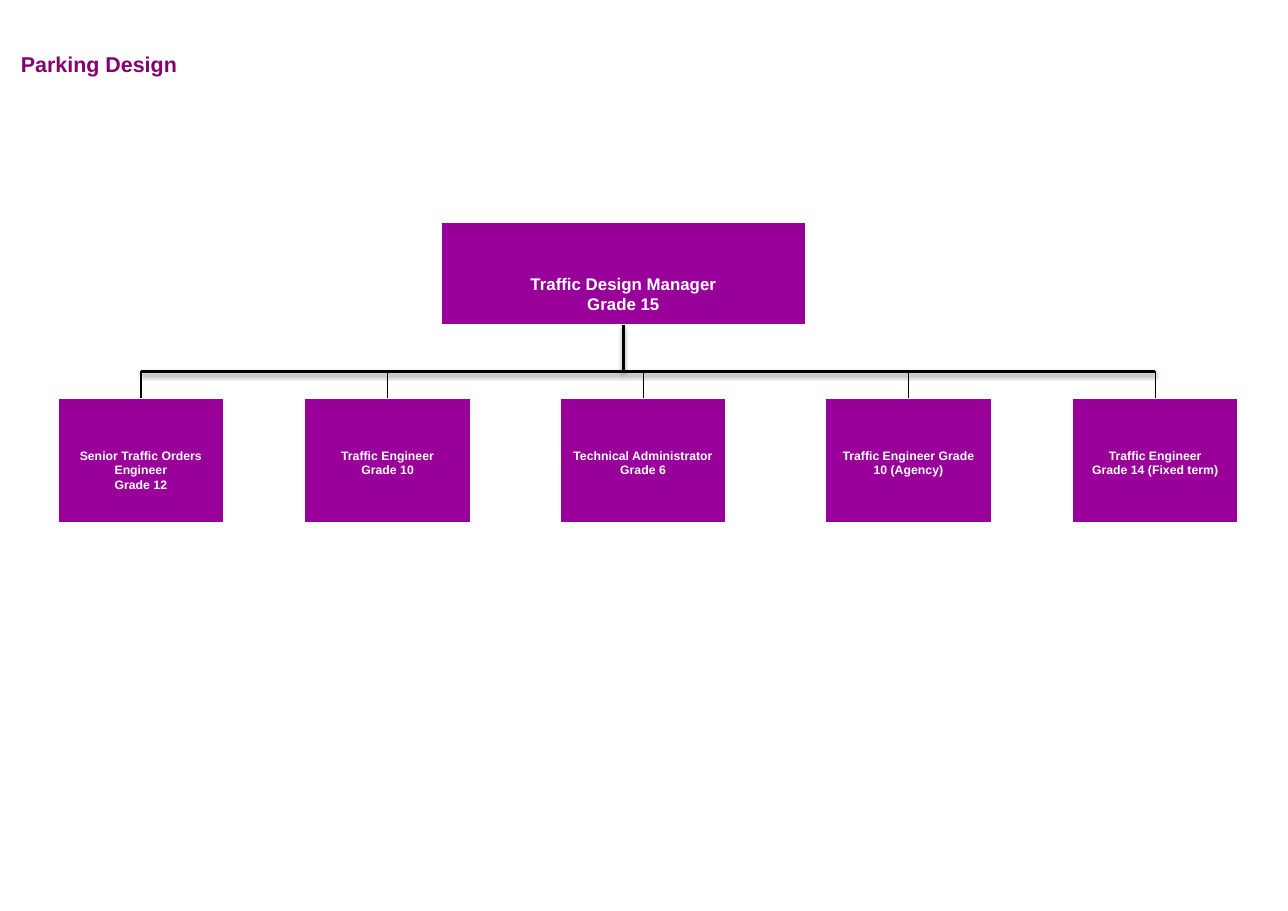
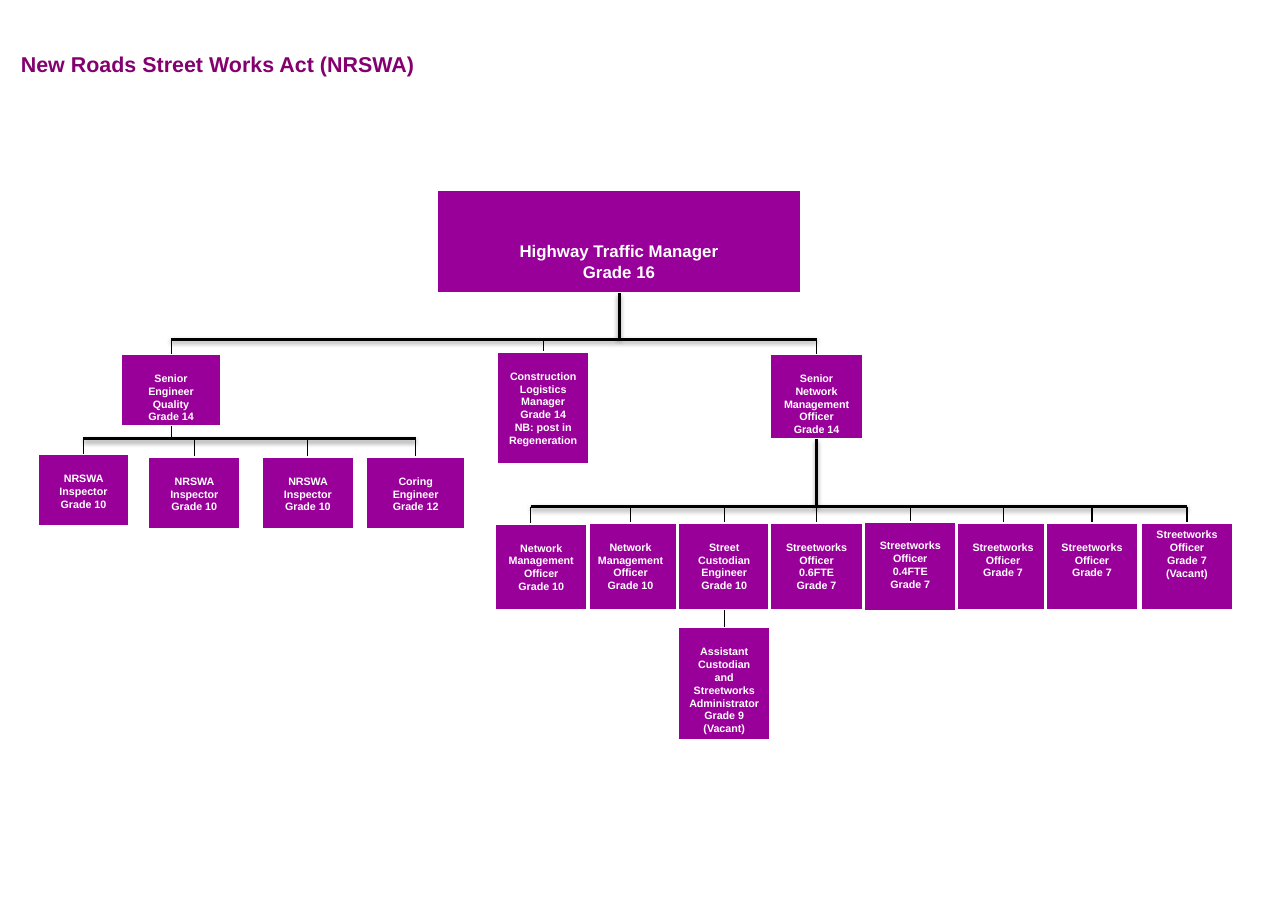
from dataclasses import dataclass

from lxml import etree
from pptx import Presentation
from pptx.dml.color import RGBColor
from pptx.enum.shapes import MSO_CONNECTOR, MSO_SHAPE
from pptx.enum.text import MSO_ANCHOR, MSO_AUTO_SIZE, PP_ALIGN
from pptx.oxml.ns import qn
from pptx.util import Cm, Pt

STRAIGHT = MSO_CONNECTOR.STRAIGHT
RECTANGLE = MSO_SHAPE.RECTANGLE
TOP = MSO_ANCHOR.TOP
MIDDLE = MSO_ANCHOR.MIDDLE
FIXED_SIZE = MSO_AUTO_SIZE.NONE
LEFT = PP_ALIGN.LEFT
CENTER = PP_ALIGN.CENTER
TITLE_ONLY = 5
TOP_SIDE, BOTTOM_SIDE = 0, 2


@dataclass(frozen=True)
class Theme:
    font: str = "Arial"
    title_color: RGBColor = RGBColor(0x84, 0x00, 0x6F)
    post_fill: RGBColor = RGBColor(0x99, 0x00, 0x99)
    white: RGBColor = RGBColor(0xFF, 0xFF, 0xFF)
    black: RGBColor = RGBColor(0x00, 0x00, 0x00)
    title_size: float = 14
    manager_size: float = 11
    post_size: float = 8
    small_post_size: float = 7
    border: float = 2
    rail: float = 2
    drop: float = 0.75


@dataclass(frozen=True)
class Box:
    left: float
    top: float
    width: float
    height: float


@dataclass(frozen=True)
class PostStyle:
    size: float
    head_room: float
    anchor: MSO_ANCHOR = TOP


@dataclass(frozen=True)
class Post:
    lines: tuple
    left: float
    drop: float
    width: float
    height: float
    style: PostStyle
    joint: float | None = None


THEME = Theme()
MANAGER = PostStyle(THEME.manager_size, 1.05, MIDDLE)
WIDE = PostStyle(THEME.post_size, 1.16)
SMALL = PostStyle(THEME.small_post_size, 0.42)
RAISED = PostStyle(THEME.small_post_size, 0.13)

TITLE_BOX = Box(0.25, 0.33, 10.57, 2.31)
INSPECTOR = ("NRSWA Inspector", "Grade 10")
NETWORK_OFFICER = ("Network Management Officer", "Grade 10")
STREETWORKS_OFFICER = ("Streetworks Officer", "Grade 7")


def add_run(paragraph, text, size, color):
    run = paragraph.add_run()
    run.text = text
    run.font.name = THEME.font
    run.font.size = Pt(size)
    run.font.bold = True
    run.font.color.rgb = color


def add_title(slide, box, text):
    title = slide.shapes.title
    title.left, title.top = Cm(box.left), Cm(box.top)
    title.width, title.height = Cm(box.width), Cm(box.height)
    frame = title.text_frame
    frame.auto_size = FIXED_SIZE
    frame.word_wrap = True
    frame.vertical_anchor = MIDDLE
    frame.margin_left = frame.margin_right = Cm(0.23)
    frame.margin_top = frame.margin_bottom = Cm(0.1)
    heading = frame.paragraphs[0]
    heading.alignment = LEFT
    add_run(heading, text, THEME.title_size, THEME.title_color)


def add_post(slide, box, lines, style):
    post = slide.shapes.add_shape(
        RECTANGLE, Cm(box.left), Cm(box.top), Cm(box.width), Cm(box.height)
    )
    post.shadow.inherit = False
    post.fill.solid()
    post.fill.fore_color.rgb = THEME.post_fill
    post.line.color.rgb = THEME.white
    post.line.width = Pt(THEME.border)
    frame = post.text_frame
    frame.word_wrap = True
    frame.vertical_anchor = style.anchor
    frame.margin_left = frame.margin_right = Cm(0.25)
    frame.margin_top = Cm(style.head_room)
    frame.margin_bottom = Cm(0.13) if style.anchor == MIDDLE else 0
    for index, line in enumerate(lines):
        paragraph = frame.paragraphs[0] if index == 0 else frame.add_paragraph()
        paragraph.alignment = CENTER
        add_run(paragraph, line, style.size, THEME.white)
    return post


def add_link(slide, start, end, weight):
    link = slide.shapes.add_connector(STRAIGHT, *start, *end)
    link.line.color.rgb = THEME.black
    link.line.width = Pt(weight)
    effects = etree.SubElement(link._element.spPr, qn("a:effectLst"))
    if weight == THEME.rail:
        shadow = etree.SubElement(
            effects, qn("a:outerShdw"), blurRad=str(Pt(3.1)), dist=str(Pt(1.6)),
            dir="5400000", rotWithShape="0",
        )
        black = etree.SubElement(shadow, qn("a:srgbClr"), val=str(THEME.black))
        etree.SubElement(black, qn("a:alpha"), val="38000")
    return link


def center_x(post):
    return post.left + post.width // 2


def add_team(slide, left, rail_top, manager, posts, stem_weight):
    members = [
        add_post(
            slide,
            Box(left + post.left, rail_top + post.drop, post.width, post.height),
            post.lines,
            post.style,
        )
        for post in posts
    ]
    rail_y = Cm(rail_top)
    joints = []
    for post, member in zip(posts, members):
        joint = center_x(member) if post.joint is None else Cm(left + post.joint)
        joints.append(joint)
        drop = add_link(slide, (joint, rail_y), (joint, member.top), THEME.drop)
        if post.joint is None:
            drop.end_connect(member, TOP_SIDE)
    add_link(slide, (min(joints), rail_y), (max(joints), rail_y), THEME.rail)
    stem_x = center_x(manager)
    stem = add_link(
        slide, (stem_x, manager.top + manager.height), (stem_x, rail_y), stem_weight
    )
    stem.begin_connect(manager, BOTTOM_SIDE)
    return members


def add_assistant(slide, box, manager, lines):
    assistant = add_post(slide, box, lines, SMALL)
    x = center_x(manager)
    link = add_link(
        slide, (x, manager.top + manager.height), (x, assistant.top), THEME.drop
    )
    link.begin_connect(manager, BOTTOM_SIDE)
    link.end_connect(assistant, TOP_SIDE)


def start_slide(deck, title):
    slide = deck.slides.add_slide(deck.slide_layouts[TITLE_ONLY])
    add_title(slide, TITLE_BOX, title)
    return slide


def build_parking_design(deck):
    slide = start_slide(deck, "Parking Design")
    manager = add_post(
        slide, Box(10.16, 5.11, 8.43, 2.39), ("Traffic Design Manager", "Grade 15"), MANAGER
    )
    team = (
        (0, ("Senior Traffic Orders Engineer", "Grade 12")),
        (5.69, ("Traffic Engineer", "Grade 10")),
        (11.58, ("Technical Administrator", "Grade 6")),
        (17.7, ("Traffic Engineer Grade 10 (Agency)",)),
        (23.39, ("Traffic Engineer", "Grade 14 (Fixed term)")),
    )
    posts = [Post(lines, left, 0.61, 3.86, 2.9, WIDE) for left, lines in team]
    add_team(slide, 1.32, 8.56, manager, posts, THEME.rail)


def build_street_works(deck):
    slide = start_slide(deck, "New Roads Street Works Act (NRSWA)")
    manager = add_post(
        slide, Box(10.06, 4.37, 8.43, 2.39), ("Highway Traffic Manager", "Grade 16"), MANAGER
    )
    seniors = (
        Post(("Senior Engineer Quality", "Grade 14"), 0, 0.33, 2.31, 1.68, SMALL),
        Post(
            ("Construction Logistics Manager", "Grade 14", "NB: post in Regeneration"),
            8.67, 0.28, 2.13, 2.62, SMALL,
        ),
        Post(("Senior Network Management Officer", "Grade 14"), 14.96, 0.33, 2.16, 1.98, SMALL),
    )
    quality, _, network = add_team(slide, 2.79, 7.82, manager, seniors, THEME.rail)

    inspectors = (
        Post(INSPECTOR, 0, 0.35, 2.13, 1.68, SMALL),
        Post(INSPECTOR, 2.54, 0.41, 2.16, 1.68, SMALL),
        Post(INSPECTOR, 5.16, 0.41, 2.16, 1.68, SMALL),
        Post(("Coring Engineer", "Grade 12"), 7.57, 0.41, 2.31, 1.68, SMALL),
    )
    add_team(slide, 0.86, 10.11, quality, inspectors, THEME.drop)

    officers = (
        Post(("Street Custodian Engineer", "Grade 10"), 4.22, 0.36, 2.16, 2.03, SMALL),
        Post(("Streetworks Officer", "0.6FTE", "Grade 7"), 6.35, 0.36, 2.16, 2.03, SMALL),
        Post(("Streetworks Officer", "0.4FTE", "Grade 7"), 8.51, 0.33, 2.16, 2.08, SMALL),
        Post(NETWORK_OFFICER, 2.06, 0.36, 2.16, 2.03, SMALL),
        Post(NETWORK_OFFICER, 0, 0.38, 2.16, 2.01, SMALL, joint=0.84),
        Post(STREETWORKS_OFFICER, 10.65, 0.36, 2.16, 2.03, SMALL),
        Post(STREETWORKS_OFFICER, 12.7, 0.36, 2.16, 2.03, SMALL),
        Post((*STREETWORKS_OFFICER, "(Vacant)"), 14.89, 0.36, 2.16, 2.03, RAISED),
    )
    custodian = add_team(slide, 11.4, 11.68, network, officers, THEME.rail)[0]
    add_assistant(
        slide,
        Box(15.62, 14.45, 2.16, 2.62),
        custodian,
        ("Assistant Custodian and Streetworks Administrator", "Grade 9", "(Vacant)"),
    )


def main():
    deck = Presentation()
    deck.slide_width, deck.slide_height = Cm(29.7), Cm(21)
    build_parking_design(deck)
    build_street_works(deck)
    deck.save("out.pptx")


if __name__ == "__main__":
    main()
